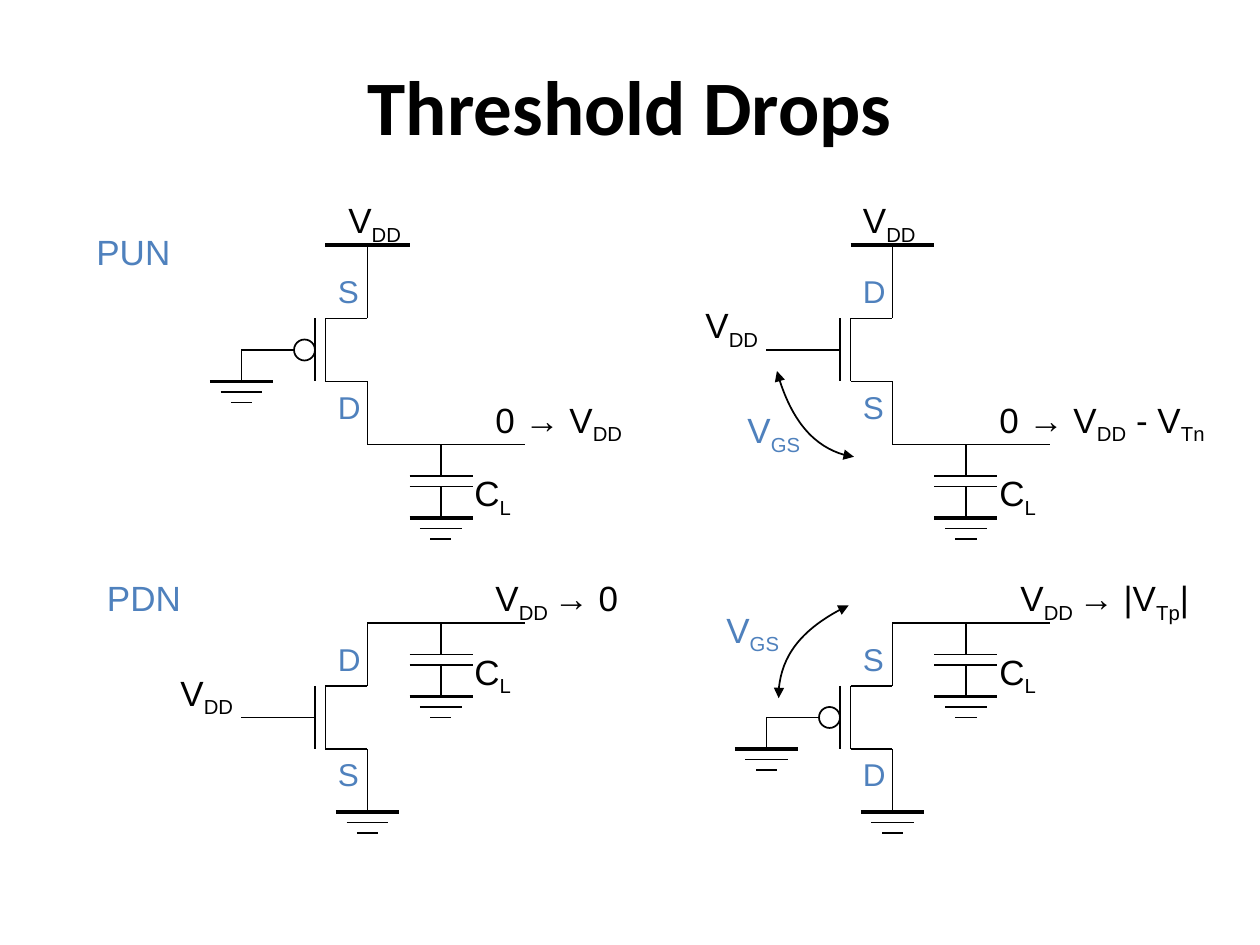
from typing import NamedTuple

from lxml.etree import SubElement
from pptx import Presentation
from pptx.dml.color import RGBColor
from pptx.enum.shapes import MSO_CONNECTOR, MSO_SHAPE
from pptx.enum.text import MSO_ANCHOR, MSO_AUTO_SIZE, PP_ALIGN
from pptx.oxml.ns import qn
from pptx.util import Pt

PX = 12700
COLORS = {"ink": "000000", "blue": "4F81BD"}
THIN, THICK = 1, 2.25
HALF, STEP = 18, 6


class Label(NamedTuple):
    text: str
    x: int
    y: int
    wide: int
    color: str = "ink"


class Stage(NamedTuple):
    x: int
    y: int
    pull_up: bool
    bubble: bool
    ends: str


class Curve(NamedTuple):
    start: tuple
    bend: tuple
    turn: tuple
    end: tuple


STAGES = [
    Stage(210, 200, True, True, "SD"),
    Stage(510, 200, True, False, "DS"),
    Stage(210, 410, False, False, "DS"),
    Stage(510, 410, False, True, "SD"),
]
LABELS = [
    Label("PUN", 48, 128, 57, "blue"),
    Label("PDN", 54, 326, 57, "blue"),
    Label("V~DD", 192, 110, 47),
    Label("V~DD", 486, 110, 47),
    Label("V~DD", 96, 380, 47),
    Label("V~DD", 396, 170, 47),
    Label("0 → V~DD", 276, 224, 89),
    Label("0 → V~DD~ - V~Tn", 564, 224, 135),
    Label("V~DD ~→ 0", 276, 326, 89),
    Label("V~DD ~→ |V~Tp~|", 576, 326, 117),
    Label("V~GS", 420, 230, 47, "blue"),
    Label("V~GS", 408, 344, 47, "blue"),
]
CURVES = [
    Curve((444, 212), (451, 239), (469, 259), (488, 261)),
    Curve((485, 346), (459, 358), (444, 379), (445, 399)),
]


def paint(name: str) -> RGBColor:
    return RGBColor.from_string(COLORS[name])


def write(frame, text: str, *, size: int = 20, font: str = "Arial",
          color: str = "ink", bold: bool = False, align=PP_ALIGN.LEFT) -> None:
    para = frame.paragraphs[0]
    para.alignment = align
    for i, part in enumerate(text.split("~")):
        run = para.add_run()
        run.text = part
        run.font.size = Pt(size)
        run.font.name = font
        run.font.bold = bold
        run.font.color.rgb = paint(color)
        if i % 2:
            run.font._element.set("baseline", "-25000")


def label(slide, item: Label, size: int = 20, tall: int = 31) -> None:
    box = slide.shapes.add_textbox(item.x * PX, item.y * PX, item.wide * PX, tall * PX)
    frame = box.text_frame
    frame.word_wrap = False
    frame.auto_size = MSO_AUTO_SIZE.SHAPE_TO_FIT_TEXT
    write(frame, item.text, size=size, color=item.color)


def stroke(shape, width: float = THIN) -> None:
    shape.line.color.rgb = paint("ink")
    shape.line.width = Pt(width)


def wire(slide, x1: int, y1: int, x2: int, y2: int, width: float = THIN) -> None:
    link = slide.shapes.add_connector(
        MSO_CONNECTOR.STRAIGHT, x1 * PX, y1 * PX, x2 * PX, y2 * PX)
    stroke(link, width)
    SubElement(link._element.spPr, qn("a:effectLst"))


def ground(slide, x: int, y: int) -> None:
    for i, width in enumerate((THICK, THIN, THIN)):
        half = HALF - i * STEP
        wire(slide, x - half, y + i * STEP, x + half, y + i * STEP, width)


def load(slide, x: int, y: int) -> None:
    top = y + 18
    low = top + STEP
    wire(slide, x, y, x, top)
    for plate in (top, low):
        wire(slide, x - HALF, plate, x + HALF, plate)
    wire(slide, x, low, x, low + 18)
    ground(slide, x, low + 18)
    label(slide, Label("C~L", x + 12, y + 12, 36))


def gate(slide, x: int, y: int, bubble: bool) -> None:
    top, low = y - HALF, y + HALF
    for end in (top, low):
        wire(slide, x - 24, end, x, end)
    for side in (x - 24, x - 30):
        wire(slide, side, top, side, low)
    left = x - 72
    wire(slide, left, y, x - 42 if bubble else x - 30, y)
    if bubble:
        ring = slide.shapes.add_shape(
            MSO_SHAPE.OVAL, (x - 42) * PX, (y - 6) * PX, 12 * PX, 12 * PX)
        ring.fill.background()
        stroke(ring)
        ring.shadow.inherit = False
        wire(slide, left, y, left, low)
        ground(slide, left, low)


def stage(slide, item: Stage) -> None:
    x, y = item.x, item.y
    top = y - 60 if item.pull_up else y - 54
    low = y + 54
    wire(slide, x, top, x, y - HALF)
    wire(slide, x, y + HALF, x, low)
    gate(slide, x, y, item.bubble)
    if item.pull_up:
        wire(slide, x - 24, top, x + 24, top, THICK)
    else:
        ground(slide, x, low)
    out = low if item.pull_up else top
    wire(slide, x, out, x + 90, out)
    load(slide, x + 42, out)
    for name, spot in zip(item.ends, (y - 48, y + 18)):
        label(slide, Label(name, x - 24, spot, 27, "blue"), size=18, tall=29)


def arc(slide, item: Curve) -> None:
    pen = slide.shapes.build_freeform(*item.start, scale=PX)
    pen.add_line_segments(item[1:], close=False)
    shape = pen.convert_to_shape()
    shape.fill.background()
    stroke(shape)
    shape.shadow.inherit = False
    props = shape._element.spPr
    route = next(props.iter(qn("a:moveTo"))).getparent()
    steps = route.findall(qn("a:lnTo"))
    bezier = SubElement(route, qn("a:cubicBezTo"))
    for step in steps:
        bezier.append(step[0])
        route.remove(step)
    edge = props.find(qn("a:ln"))
    for tip in ("a:headEnd", "a:tailEnd"):
        SubElement(edge, qn(tip), type="triangle")


def main() -> None:
    deck = Presentation()
    deck.slide_width, deck.slide_height = 720 * PX, 540 * PX
    slide = deck.slides.add_slide(deck.slide_layouts[5])
    title = slide.shapes.title
    title.left, title.top = 54 * PX, 30 * PX
    title.width, title.height = 612 * PX, 60 * PX
    title.text_frame.vertical_anchor = MSO_ANCHOR.MIDDLE
    write(title.text_frame, "Threshold Drops", size=44, font="Calibri",
          bold=True, align=PP_ALIGN.CENTER)
    for item in STAGES:
        stage(slide, item)
    for item in LABELS:
        label(slide, item)
    for item in CURVES:
        arc(slide, item)
    deck.save("out.pptx")


if __name__ == "__main__":
    main()
